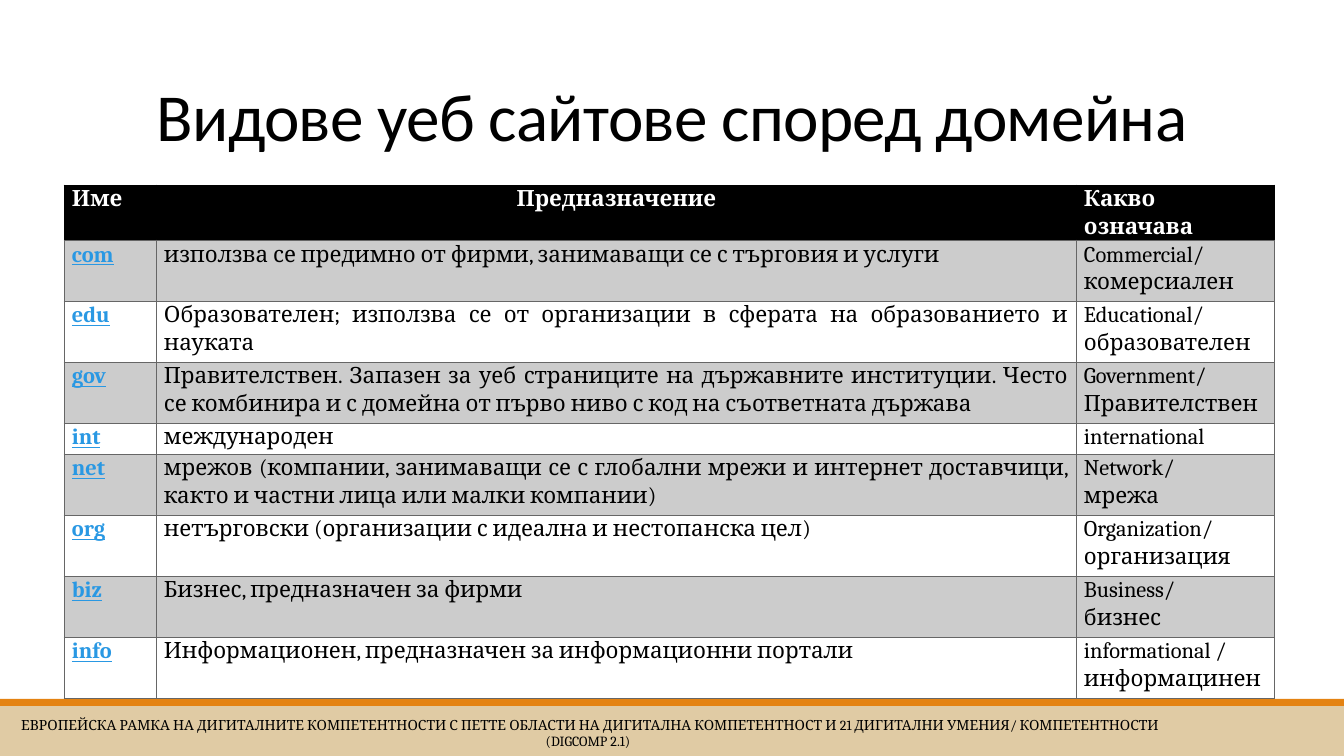
"""Build the slide on kinds of web sites by domain."""
from dataclasses import dataclass

from lxml.etree import SubElement as Sub
from pptx import Presentation
from pptx.dml.color import RGBColor as Rgb
from pptx.enum.shapes import MSO_SHAPE as Form
from pptx.enum.text import MSO_ANCHOR as Anchor, MSO_AUTO_SIZE as Fit, PP_ALIGN as Align
from pptx.oxml.ns import qn
from pptx.util import Emu, Pt


@dataclass(frozen=True)
class Theme:
    black: str = "000000"
    white: str = "FFFFFF"
    band: str = "CCCCCC"
    grid: str = "666666"
    link: str = "2998E3"
    sand: str = "E0CBA4"
    amber: str = "E48312"
    sans: str = "Calibri"
    serif: str = "Cambria"
    head: int = 48
    body: int = 16
    foot: int = 10
    rule: float = 0.75


@dataclass(frozen=True)
class Box:
    left: int
    top: int
    width: int
    height: int


@dataclass(frozen=True)
class Bar:
    box: Box
    color: str


@dataclass(frozen=True)
class Site:
    name: str
    use: str
    sense: str
    align: Align = Align.JUSTIFY
    height: int = 61


@dataclass(frozen=True)
class Look:
    fill: str
    line: str
    ink: str
    align: Align
    bold: bool = False
    under: bool = False


THEME = Theme()
WIDE, HIGH = 1344, 756
COLS = (92, 920, 199)
TOP = 55
HEADS = ("Име", "Предназначение", "Какво означава")
TITLE = "Видове уеб сайтове според домейна"
FOOT = (
    "ЕВРОПЕЙСКА РАМКА НА ДИГИТАЛНИТЕ КОМПЕТЕНТНОСТИ С ПЕТТЕ ОБЛАСТИ НА ДИГИТАЛНА "
    "КОМПЕТЕНТНОСТ И 21 ДИГИТАЛНИ УМЕНИЯ/ КОМПЕТЕНТНОСТИ (DIGCOMP 2.1)"
)
BARS = (
    Bar(Box(0, 706, WIDE, 50), THEME.sand),
    Bar(Box(0, 699, WIDE, 7), THEME.amber),
)
SITES = (
    Site("com", "използва се предимно от фирми, занимаващи се с търговия и услуги",
         "Commercial/\nкомерсиален"),
    Site("edu", "Образователен; използва се от организации в сферата на образованието и науката",
         "Educational/\nобразователен"),
    Site("gov", "Правителствен. Запазен за уеб страниците на държавните институции. "
         "Често се комбинира и с домейна от първо ниво с код на съответната държава",
         "Government/\nПравителствен"),
    Site("int", "международен", "international", height=31),
    Site("net", "мрежов (компании, занимаващи се с глобални мрежи и интернет доставчици, "
         "както и частни лица или малки компании)", "Network/\nмрежа"),
    Site("org", "нетърговски (организации с идеална и нестопанска цел)",
         "Organization/\nорганизация"),
    Site("biz", "Бизнес, предназначен за фирми", "Business/\vбизнес", Align.LEFT),
    Site("info", "Информационен, предназначен за информационни портали",
         "informational /\vинформацинен", Align.LEFT),
)


def px(count: int) -> Emu:
    """Turn px into EMU."""
    return Emu(round(count * 914400 / 100.8))


def spots(box: Box) -> tuple[Emu, ...]:
    """Give the four lengths of a box in EMU."""
    return px(box.left), px(box.top), px(box.width), px(box.height)


def style(para, face: str, size: int, ink: str, align: Align) -> None:
    """Set the font and alignment of a paragraph."""
    para.alignment = align
    para.font.name = face
    para.font.size = Pt(size)
    para.font.color.rgb = Rgb.from_string(ink)


def inset(area, left: int, right: int, end: int) -> None:
    """Set the margins of a cell or text frame."""
    area.margin_left, area.margin_right = px(left), px(right)
    area.margin_top = area.margin_bottom = px(end)


def add_title(slide) -> None:
    """Move and format the title."""
    title = slide.shapes.title
    title.left, title.top, title.width, title.height = spots(Box(0, 0, WIDE, 160))
    frame = title.text_frame
    frame.text = TITLE
    frame.auto_size = Fit.NONE
    frame.vertical_anchor = Anchor.BOTTOM
    para = frame.paragraphs[0]
    style(para, THEME.sans, THEME.head, THEME.black, Align.CENTER)
    para.line_spacing = 0.85
    para.runs[0]._r.get_or_add_rPr().set("spc", "-50")


def add_bar(slide, bar: Bar) -> None:
    """Draw one plain strip."""
    shape = slide.shapes.add_shape(Form.RECTANGLE, *spots(bar.box))
    shape.shadow.inherit = False
    shape.fill.solid()
    shape.fill.fore_color.rgb = Rgb.from_string(bar.color)
    shape.line.fill.background()


def edge(cell, color: str) -> None:
    """Draw the four borders of a cell."""
    props = cell._tc.get_or_add_tcPr()
    for tag in ("a:lnL", "a:lnR", "a:lnT", "a:lnB"):
        line = Sub(props, qn(tag), w=str(int(Pt(THEME.rule))))
        Sub(Sub(line, qn("a:solidFill")), qn("a:srgbClr"), val=color)


def fill_cell(cell, text: str, look: Look) -> None:
    """Write and format one table cell."""
    edge(cell, look.line)
    cell.fill.solid()
    cell.fill.fore_color.rgb = Rgb.from_string(look.fill)
    inset(cell, 8, 7, 0)
    cell.text_frame.text = text
    for para in cell.text_frame.paragraphs:
        style(para, THEME.serif, THEME.body, look.ink, look.align)
        para.line_spacing = 1.07
        para.font.bold = look.bold
        para.font.underline = look.under


def add_sites(slide) -> None:
    """Draw the table of domains."""
    box = Box(64, 185, sum(COLS), TOP + sum(site.height for site in SITES))
    table = slide.shapes.add_table(len(SITES) + 1, len(COLS), *spots(box)).table
    for col, width in zip(table.columns, COLS):
        col.width = px(width)
    table.rows[0].height = px(TOP)
    for spot, head in enumerate(HEADS):
        align = Align.CENTER if spot == 1 else Align.JUSTIFY
        look = Look(THEME.black, THEME.black, THEME.white, align, bold=True)
        fill_cell(table.cell(0, spot), head, look)
    for row, site in enumerate(SITES, 1):
        table.rows[row].height = px(site.height)
        fill = THEME.band if row % 2 else THEME.white
        link = Look(fill, THEME.grid, THEME.link, site.align, bold=True, under=True)
        plain = Look(fill, THEME.grid, THEME.black, site.align)
        fill_cell(table.cell(row, 0), site.name, link)
        fill_cell(table.cell(row, 1), site.use, plain)
        fill_cell(table.cell(row, 2), site.sense, plain)


def add_foot(slide) -> None:
    """Write the line at the foot of the slide."""
    frame = slide.shapes.add_textbox(*spots(Box(0, 713, 1176, 40))).text_frame
    frame.word_wrap = True
    frame.vertical_anchor = Anchor.MIDDLE
    inset(frame, 4, 4, 4)
    frame.text = FOOT
    para = frame.paragraphs[0]
    style(para, THEME.serif, THEME.foot, THEME.black, Align.CENTER)
    para._p.get_or_add_pPr().set("indent", str(px(4)))


def main() -> None:
    """Build and save the slide."""
    deck = Presentation()
    deck.slide_width, deck.slide_height = px(WIDE), px(HIGH)
    slide = deck.slides.add_slide(deck.slide_layouts[5])
    for bar in BARS:
        add_bar(slide, bar)
    add_title(slide)
    add_sites(slide)
    add_foot(slide)
    deck.save("out.pptx")


if __name__ == "__main__":
    main()
